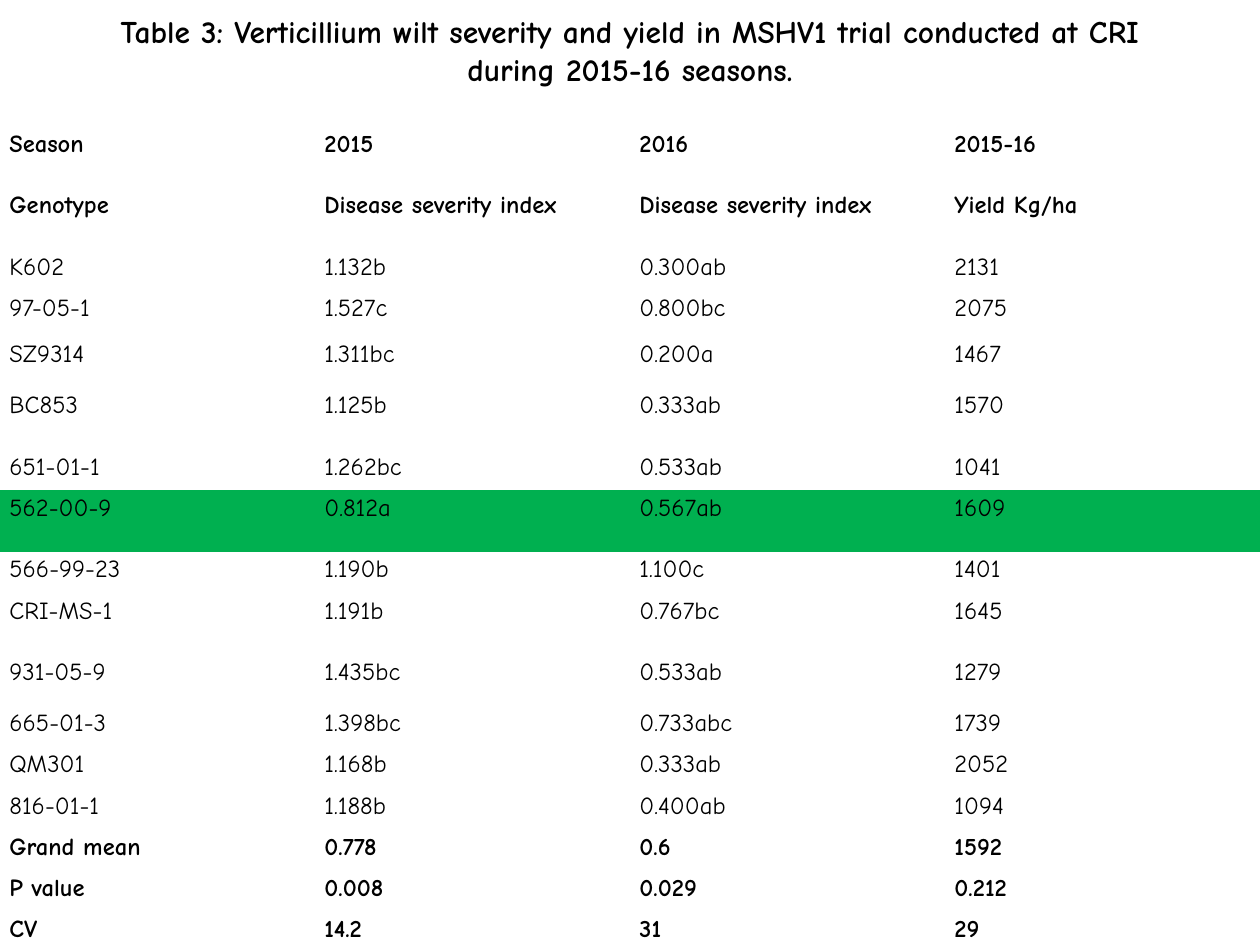
from pptx import Presentation
from pptx import util as u
from pptx.dml.color import RGBColor
from pptx.enum import text
from pptx.oxml.ns import qn

TITLE = ("Table 3: Verticillium wilt severity and yield in MSHV1 trial "
         "conducted at CRI during 2015-16 seasons.")
FONT = "Comic Neue"
BLACK, GREEN = "000000", "00B050"
NO_STYLE_NO_GRID = "{2D5ABB26-0587-4C30-8999-92F81FD0307C}"

SMALL, MEDIUM, LARGE, TALL = 0.83, 0.93, 1.03, 1.24  # row heights in cm

HEADINGS = [
    (TALL, "Season", "2015", "2016", "2015-16"),
    (TALL, "Genotype", "Disease severity index", "Disease severity index", "Yield Kg/ha"),
]
GENOTYPES = [
    (SMALL, "K602", "1.132b", "0.300ab", "2131"),
    (MEDIUM, "97-05-1", "1.527c", "0.800bc", "2075"),
    (LARGE, "SZ9314", "1.311bc", "0.200a", "1467"),
    (TALL, "BC853", "1.125b", "0.333ab", "1570"),
    (SMALL, "651-01-1", "1.262bc", "0.533ab", "1041"),
    (TALL, "562-00-9", "0.812a", "0.567ab", "1609"),
    (SMALL, "566-99-23", "1.190b", "1.100c", "1401"),
    (TALL, "CRI-MS-1", "1.191b", "0.767bc", "1645"),
    (LARGE, "931-05-9", "1.435bc", "0.533ab", "1279"),
    (SMALL, "665-01-3", "1.398bc", "0.733abc", "1739"),
    (SMALL, "QM301", "1.168b", "0.333ab", "2052"),
    (SMALL, "816-01-1", "1.188b", "0.400ab", "1094"),
]
STATISTICS = [
    (SMALL, "Grand mean", "0.778", "0.6", "1592"),
    (SMALL, "P value", "0.008", "0.029", "0.212"),
    (TALL, "CV", "14.2", "31", "29"),
]
HIGHLIGHTED = "562-00-9"


def color(value):
    return RGBColor.from_string(value)


def write(frame, words, size=14, bold=False, align=text.PP_ALIGN.JUSTIFY, spacing=1.15):
    frame.word_wrap = True
    paragraph = frame.paragraphs[0]
    paragraph.alignment = align
    paragraph.line_spacing = spacing
    run = paragraph.add_run()
    run.text = words
    run.font.name = FONT
    run.font.size = u.Pt(size)
    run.font.bold = bold
    run.font.color.rgb = color(BLACK)


def add_title(slide):
    title = slide.shapes.title
    title.left, title.top = u.Cm(1.27), u.Cm(0)
    title.width, title.height = u.Cm(22.86), u.Cm(2.74)
    frame = title.text_frame
    frame.auto_size = text.MSO_AUTO_SIZE.NONE
    frame.vertical_anchor = text.MSO_ANCHOR.TOP
    frame.margin_top = u.Cm(0.25)
    write(frame, TITLE, size=18, bold=True, align=text.PP_ALIGN.CENTER, spacing=1.0)


def add_trial_table(slide):
    rows = HEADINGS + GENOTYPES + STATISTICS
    height = sum(row[0] for row in rows)
    shape = slide.shapes.add_table(len(rows), 4, u.Cm(0), u.Cm(2.54), u.Cm(25.4), u.Cm(height))
    next(shape.element.iter(qn("a:tableStyleId"))).text = NO_STYLE_NO_GRID
    table = shape.table
    table.first_row = table.horz_banding = False

    for table_row, row in zip(table.rows, rows):
        row_height, *values = row
        table_row.height = u.Cm(row_height)
        for cell, value in zip(table_row.cells, values):
            cell.margin_left = cell.margin_right = u.Cm(0.19)
            cell.margin_top = cell.margin_bottom = 0
            if values[0] == HIGHLIGHTED:
                cell.fill.solid()
                cell.fill.fore_color.rgb = color(GREEN)
            else:
                cell.fill.background()
            write(cell.text_frame, value, bold=row not in GENOTYPES)


def main():
    presentation = Presentation()
    presentation.slide_width, presentation.slide_height = u.Cm(25.4), u.Cm(19.05)
    slide = presentation.slides.add_slide(presentation.slide_layouts[5])
    add_title(slide)
    add_trial_table(slide)
    presentation.save("out.pptx")


if __name__ == "__main__":
    main()
